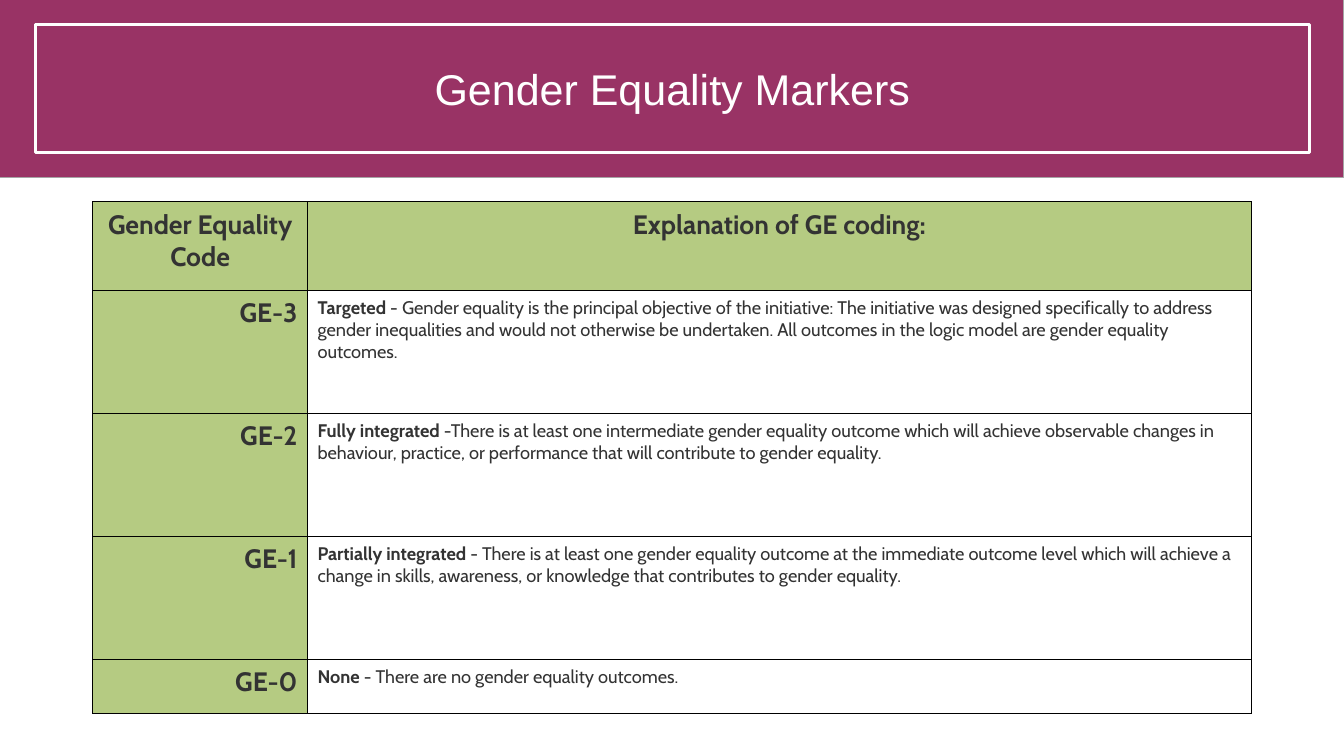
"""Build the Gender Equality Markers slide with its coding table."""
from dataclasses import dataclass

from lxml.etree import SubElement
from pptx import Presentation
from pptx.dml.color import RGBColor
from pptx.enum.shapes import MSO_SHAPE
from pptx.enum.text import MSO_ANCHOR, PP_ALIGN
from pptx.oxml.ns import qn
from pptx.shapes.autoshape import Shape
from pptx.slide import Slide
from pptx.table import _Cell
from pptx.util import Inches, Pt

PLUM = "993365"
GREEN = "B5CB82"
WHITE = "FFFFFF"
GREY = "A5A5A5"
DARK = "333333"
BLACK = "000000"


@dataclass(frozen=True)
class Marker:
    code: str
    label: str
    explanation: str
    height: float


@dataclass(frozen=True)
class Panel:
    left: float
    top: float
    width: float
    height: float
    fill: str | None
    line: str
    line_width: float


MARKERS = [
    Marker("GE-3", "Targeted",
           " - Gender equality is the principal objective of the initiative: "
           "The initiative was designed specifically to address gender "
           "inequalities and would not otherwise be undertaken. All outcomes "
           "in the logic model are gender equality outcomes.", 1.22),
    Marker("GE-2", "Fully integrated",
           " -There is at least one intermediate gender equality outcome which "
           "will achieve observable changes in behaviour, practice, or "
           "performance that will contribute to gender equality.", 1.22),
    Marker("GE-1", "Partially integrated",
           " - There is at least one gender equality outcome at the immediate "
           "outcome level which will achieve a change in skills, awareness, or "
           "knowledge that contributes to gender equality.", 1.22),
    Marker("GE-0", "None", " - There are no gender equality outcomes.", 0.54),
]
HEADINGS = ["Gender Equality Code", "Explanation of GE coding:"]
HEADING_HEIGHT = 0.88
COLUMN_WIDTHS = [2.13, 9.36]
BANNER = Panel(0, 0, 13.33, 1.76, PLUM, GREY, 0.75)
TITLE_FRAME = Panel(0.35, 0.24, 12.64, 1.27, None, WHITE, 2.25)


def color(value: str) -> RGBColor:
    """Turn a hex string into a colour."""
    return RGBColor.from_string(value)


def add_panel(slide: Slide, panel: Panel) -> Shape:
    """Draw an outlined rectangle."""
    box = slide.shapes.add_shape(
        MSO_SHAPE.RECTANGLE, Inches(panel.left), Inches(panel.top),
        Inches(panel.width), Inches(panel.height))
    box.shadow.inherit = False
    if panel.fill:
        box.fill.solid()
        box.fill.fore_color.rgb = color(panel.fill)
    else:
        box.fill.background()
    box.line.color.rgb = color(panel.line)
    box.line.width = Pt(panel.line_width)
    return box


def add_title(slide: Slide, text: str) -> None:
    """Write the title inside its white frame."""
    frame = add_panel(slide, TITLE_FRAME).text_frame
    frame.word_wrap = True
    frame.vertical_anchor = MSO_ANCHOR.MIDDLE
    frame.margin_left = frame.margin_right = Inches(0.13)
    frame.margin_top = frame.margin_bottom = Inches(0.13)
    title = frame.paragraphs[0]
    title.text = text
    title.alignment = PP_ALIGN.CENTER
    title.font.name = "Arial"
    title.font.size = Pt(30.7)
    title.font.color.rgb = color(WHITE)


def add_borders(cell: _Cell) -> None:
    """Give a cell a thin black line on every side."""
    properties = cell._tc.get_or_add_tcPr()
    for side in ("a:lnL", "a:lnR", "a:lnT", "a:lnB"):
        line = SubElement(properties, qn(side), w=str(Pt(0.75)))
        SubElement(SubElement(line, qn("a:solidFill")), qn("a:srgbClr"), val=BLACK)


def fill_cell(cell: _Cell, bold_text: str, plain_text: str, size: float,
              alignment: PP_ALIGN, fill: str | None) -> None:
    """Write and style one table cell."""
    add_borders(cell)
    if fill:
        cell.fill.solid()
        cell.fill.fore_color.rgb = color(fill)
    else:
        cell.fill.background()
    cell.margin_left = cell.margin_right = Inches(0.1)
    cell.margin_top = cell.margin_bottom = Inches(0.07)
    entry = cell.text_frame.paragraphs[0]
    entry.alignment = alignment
    entry.font.name = "Cabin"
    entry.font.size = Pt(size)
    entry.font.color.rgb = color(DARK)
    for text, bold in ((bold_text, True), (plain_text, False)):
        if text:
            run = entry.add_run()
            run.text = text
            run.font.bold = bold


def add_marker_table(slide: Slide) -> None:
    """Draw the table of codes and their explanations."""
    heights = [HEADING_HEIGHT] + [marker.height for marker in MARKERS]
    table = slide.shapes.add_table(
        len(heights), len(COLUMN_WIDTHS), Inches(0.92), Inches(2),
        Inches(sum(COLUMN_WIDTHS)), Inches(sum(heights))).table
    table.first_row = table.horz_banding = False
    for column, width in zip(table.columns, COLUMN_WIDTHS):
        column.width = Inches(width)
    for row, height in zip(table.rows, heights):
        row.height = Inches(height)
    for index, heading in enumerate(HEADINGS):
        fill_cell(table.cell(0, index), heading, "", 19, PP_ALIGN.CENTER, GREEN)
    for index, marker in enumerate(MARKERS, start=1):
        fill_cell(table.cell(index, 0), marker.code, "", 19, PP_ALIGN.RIGHT, GREEN)
        fill_cell(table.cell(index, 1), marker.label, marker.explanation, 13,
                  PP_ALIGN.LEFT, None)


def main() -> None:
    """Create the slide and save it."""
    deck = Presentation()
    deck.slide_width, deck.slide_height = Inches(13.33), Inches(7.5)
    slide = deck.slides.add_slide(deck.slide_layouts[6])
    add_marker_table(slide)
    add_panel(slide, BANNER)
    add_title(slide, "Gender Equality Markers")
    deck.save("out.pptx")


if __name__ == "__main__":
    main()
